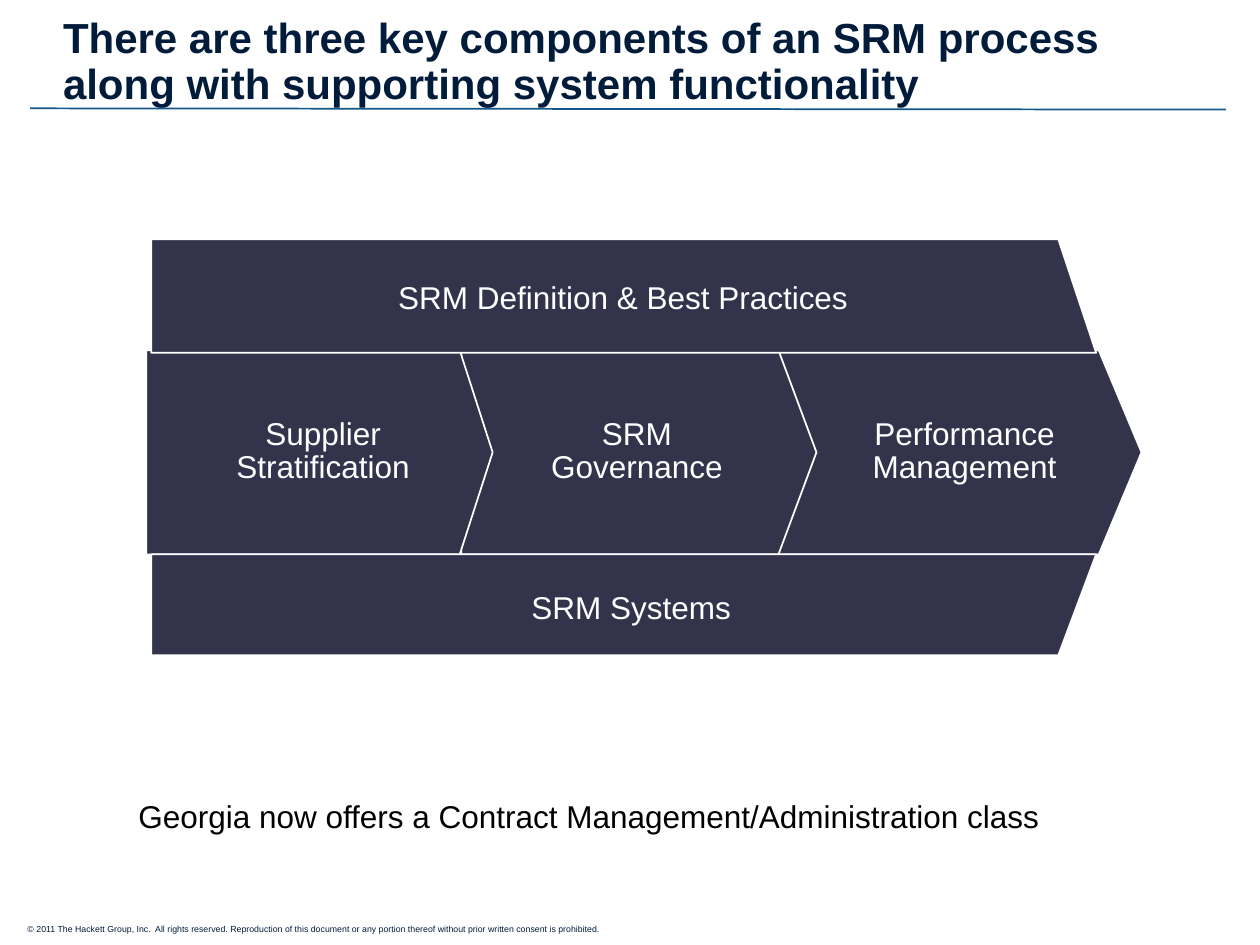
"""Build the slide on the components of an SRM process, on a grid of 100 columns by 75 rows."""

from typing import NamedTuple

import pptx
import pptx.dml.color
import pptx.enum.shapes
import pptx.enum.text
import pptx.oxml.ns
import pptx.util

RGBColor = pptx.dml.color.RGBColor
Align = pptx.enum.text.PP_ALIGN
Anchor = pptx.enum.text.MSO_ANCHOR
AutoSize = pptx.enum.text.MSO_AUTO_SIZE

NAVY = RGBColor(0x00, 0x1C, 0x3A)
RULE_BLUE = RGBColor(0x13, 0x57, 0x89)
SLATE = RGBColor(0x33, 0x33, 0x4C)
WHITE = RGBColor(0xFF, 0xFF, 0xFF)
BLACK = RGBColor(0x00, 0x00, 0x00)

CELL = pptx.util.Inches(0.1)
COLUMNS, ROWS = 100, 75
DIAGRAM_LEFT, STAGE_TOP, STAGE_ROWS, BAND_ROWS = 11.6, 27.8, 16.2, 8.4
STAGE_BOTTOM = STAGE_TOP + STAGE_ROWS
BAND_OUTER_RIGHT, BAND_INNER_RIGHT = 84.5, 87.4


class Box(NamedTuple):
    """Place and size in grid columns and rows."""

    left: float
    top: float
    width: float
    height: float


class Stage(NamedTuple):
    """One arrow of the process."""

    text: str
    left: float
    width: float
    point: float
    indent: float
    right_inset: float = 0
    wrap: bool = False


class Band(NamedTuple):
    """A bar whose slanted end joins the row of stages."""

    text: str
    inner_row: float
    outer_row: float
    label: Box


STAGES = (
    Stage("Performance\vManagement", 61.6, 29, 0.209, 2.6, wrap=True),
    Stage("SRM\nGovernance", 36.6, 28.2, 0.186, 3.2, right_inset=2),
    Stage("Supplier\nStratification", DIAGRAM_LEFT, 27.5, 0.161, 1.9),
)
BANDS = (
    Band("SRM Definition & Best Practices", STAGE_TOP, STAGE_TOP - BAND_ROWS, Box(25.9, 21.6, 47.1, 4)),
    Band("SRM Systems", STAGE_BOTTOM, STAGE_BOTTOM + BAND_ROWS, Box(26.1, 46.2, 48, 4)),
)


def grid(cells: float) -> int:
    """Turn grid cells into a length."""
    return pptx.util.Emu(round(cells * CELL))


def write_text(shape, text: str, *, size: float = 18, color: RGBColor = WHITE, bold: bool = False,
               align=Align.LEFT, anchor=Anchor.TOP, spacing: float = 1.0, indent: float = 0,
               insets: tuple = (1, 0.5, 1, 0.5), wrap: bool = True, auto_size=AutoSize.NONE) -> None:
    """Fill a shape with formatted text."""
    frame = shape.text_frame
    frame.text = text
    frame.word_wrap = wrap
    frame.auto_size = auto_size
    frame.vertical_anchor = anchor
    frame.margin_left, frame.margin_top, frame.margin_right, frame.margin_bottom = map(grid, insets)
    for paragraph in frame.paragraphs:
        paragraph.alignment = align
        paragraph.line_spacing = spacing
        if indent:
            properties = paragraph._p.get_or_add_pPr()
            properties.set("marL", str(grid(indent)))
            properties.set("indent", "0")
        for run in paragraph.runs:
            run.font.name = "Arial"
            run.font.size = pptx.util.Pt(size)
            run.font.bold = bold
            run.font.color.rgb = color


def add_label(slide, box: Box, text: str, **text_format) -> None:
    """Add a text box that fits its text."""
    label = slide.shapes.add_textbox(*map(grid, box))
    write_text(label, text, auto_size=AutoSize.SHAPE_TO_FIT_TEXT, **text_format)


def paint(shape) -> None:
    """Give a diagram part its fill and outline."""
    shape.shadow.inherit = False
    shape.fill.solid()
    shape.fill.fore_color.rgb = SLATE
    shape.line.color.rgb = WHITE
    shape.line.width = pptx.util.Pt(1)


def add_rule(slide) -> None:
    """Draw the line under the title."""
    rule = slide.shapes.add_connector(
        pptx.enum.shapes.MSO_CONNECTOR.STRAIGHT, grid(2.4), grid(8.6), grid(97.3), grid(8.7))
    rule.line.color.rgb = RULE_BLUE
    rule.line.width = pptx.util.Pt(1)
    rule._element.spPr.append(pptx.oxml.parse_xml(f"<a:effectLst {pptx.oxml.ns.nsdecls('a')}/>"))


def add_title(slide, text: str) -> None:
    """Place and format the title."""
    title = slide.shapes.title
    title.left, title.top, title.width, title.height = map(grid, Box(4.2, 0.8, 91.7, 8.2))
    write_text(title, text, size=24, color=NAVY, bold=True, anchor=Anchor.BOTTOM, spacing=0.9,
               insets=(0.8, 0.4, 0.8, 0.4))


def add_stage(slide, stage: Stage) -> None:
    """Draw one arrow of the process."""
    box = Box(stage.left, STAGE_TOP, stage.width, STAGE_ROWS)
    shape = slide.shapes.add_shape(pptx.enum.shapes.MSO_SHAPE.PENTAGON, *map(grid, box))
    shape.adjustments[0] = stage.point
    paint(shape)
    write_text(shape, stage.text, align=Align.CENTER, anchor=Anchor.MIDDLE, spacing=0.85,
               indent=stage.indent, insets=(0, 0.5, stage.right_inset, 0.5), wrap=stage.wrap)


def add_band(slide, band: Band) -> None:
    """Draw one slanted bar and its label."""
    builder = slide.shapes.build_freeform(DIAGRAM_LEFT, band.inner_row, scale=CELL)
    builder.add_line_segments((
        (DIAGRAM_LEFT, band.outer_row),
        (BAND_OUTER_RIGHT, band.outer_row),
        (BAND_INNER_RIGHT, band.inner_row),
    ), close=True)
    paint(builder.convert_to_shape())
    add_label(slide, band.label, band.text, align=Align.CENTER)


def main() -> None:
    """Build and save the presentation."""
    presentation = pptx.Presentation()
    presentation.slide_width = grid(COLUMNS)
    presentation.slide_height = grid(ROWS)
    slide = presentation.slides.add_slide(presentation.slide_layouts.get_by_name("Title Only"))
    add_label(slide, Box(1.2, 72.8, 61.4, 1.8),
              "© 2011 The Hackett Group, Inc.  All rights reserved. Reproduction of this document "
              "or any portion thereof without prior written consent is prohibited.",
              size=5, color=NAVY)
    add_rule(slide)
    add_title(slide, "There are three key components of an SRM process along with supporting system functionality")
    for stage in STAGES:
        add_stage(slide, stage)
    for band in BANDS:
        add_band(slide, band)
    add_label(slide, Box(10, 62.8, 80.6, 4),
              "Georgia now offers a Contract Management/Administration class", color=BLACK)
    presentation.save("out.pptx")


if __name__ == "__main__":
    main()
